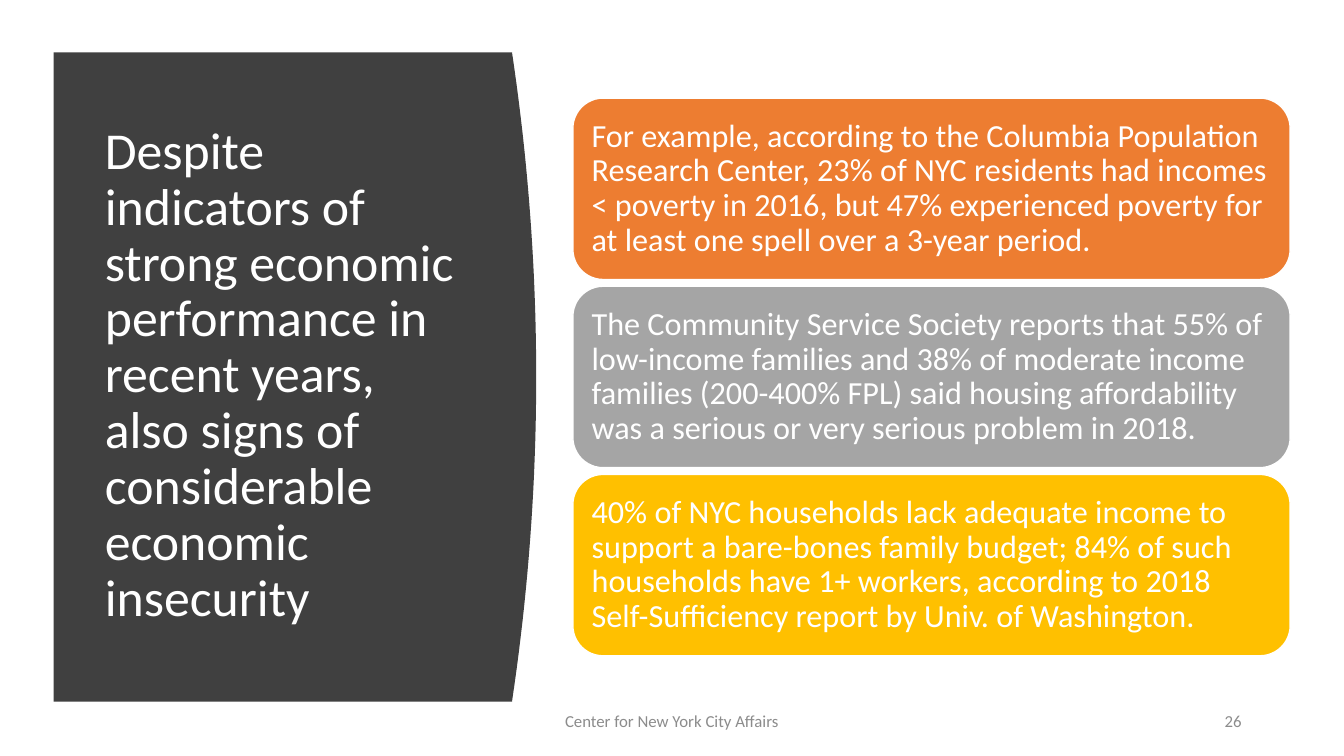
import dataclasses

import pptx
import pptx.dml.color
import pptx.enum.shapes
import pptx.enum.text
import pptx.util

ALIGN = pptx.enum.text.PP_ALIGN
COLUMNS, ROWS = 160, 90
UNIT = pptx.util.Inches(1 / 12)


@dataclasses.dataclass(frozen=True)
class Theme:
    """Colours, font and type sizes of the slide."""
    font: str = "Calibri"
    panel: str = "404040"
    light: str = "FFFFFF"
    muted: str = "8C8C8C"
    cards: tuple = ("ED7D31", "A5A5A5", "FFC000")
    title_size: int = 37
    card_size: int = 23
    footer_size: int = 12


THEME = Theme()

TITLE = ("Despite indicators of strong economic performance in recent years, "
         "also signs of considerable economic insecurity")
FINDINGS = (
    "For example, according to the Columbia Population Research Center, 23% of NYC "
    "residents had incomes < poverty in 2016, but 47% experienced poverty for at least "
    "one spell over a 3-year period.",
    "The Community Service Society reports that 55% of low-income families and 38% of "
    "moderate income families (200-400% FPL) said housing affordability was a serious "
    "or very serious problem in 2018.",
    "40% of NYC households lack adequate income to support a bare-bones family budget; "
    "84% of such households have 1+ workers, according to 2018 Self-Sufficiency report "
    "by Univ. of Washington.",
)


def grid(*cells):
    """Turn grid columns and rows into slide lengths."""
    return [round(cell * UNIT) for cell in cells]


def rgb(colour):
    """Return the colour object for a hex value."""
    return pptx.dml.color.RGBColor.from_string(colour)


def write(shape, text, size, colour, align=ALIGN.LEFT, spacing=1.0):
    """Fill a shape with one vertically centred paragraph."""
    frame = shape.text_frame
    frame.text = text
    frame.word_wrap = True
    frame.auto_size = pptx.enum.text.MSO_AUTO_SIZE.NONE
    frame.vertical_anchor = pptx.enum.text.MSO_ANCHOR.MIDDLE
    paragraph = frame.paragraphs[0]
    paragraph.alignment = align
    paragraph.line_spacing = spacing
    paragraph.font.name = THEME.font
    paragraph.font.size = pptx.util.Pt(size)
    paragraph.font.color.rgb = rgb(colour)


def paint(shape, colour):
    """Give a shape a plain fill without shadow."""
    shape.shadow.inherit = False
    shape.fill.solid()
    shape.fill.fore_color.rgb = rgb(colour)


def add_panel(slide, left, top, right, bottom, bulge, steps=40):
    """Draw the dark panel whose right edge swells outwards."""
    edge = []
    for step in range(steps + 1):
        share = step / steps
        swell = bulge * 4 * share * (1 - share)
        edge.append(grid(right + swell, top + share * (bottom - top)))
    outline = slide.shapes.build_freeform(*grid(left, top))
    outline.add_line_segments([*edge, grid(left, bottom)], close=True)
    panel = outline.convert_to_shape()
    paint(panel, THEME.panel)
    panel.line.fill.background()
    return panel


def set_title(slide, panel):
    """Place the title in front of the panel."""
    title = slide.shapes.title
    title.left, title.top, title.width, title.height = grid(11.28, 13.32, 44.9, 62.9)
    write(title, TITLE, THEME.title_size, THEME.light, spacing=0.9)
    title.element.addprevious(panel.element)


def add_card(slide, row, finding, colour):
    """Add one rounded card with a finding."""
    card = slide.shapes.add_shape(
        pptx.enum.shapes.MSO_SHAPE.ROUNDED_RECTANGLE, *grid(68.2, row, 85.4, 21.6))
    paint(card, colour)
    card.line.color.rgb = rgb(THEME.light)
    card.line.width = pptx.util.Pt(1)
    write(card, finding, THEME.card_size, THEME.light, spacing=0.9)
    frame = card.text_frame
    frame.margin_left = frame.margin_right = pptx.util.Inches(0.1)
    frame.margin_top = frame.margin_bottom = pptx.util.Inches(0.1)


def add_footer(slide, text, column, width, align):
    """Add a small grey text on the footer row."""
    footer = slide.shapes.add_textbox(*grid(column, 83.4, width, 4.8))
    write(footer, text, THEME.footer_size, THEME.muted, align)


def main():
    """Build the slide and save it."""
    deck = pptx.Presentation()
    deck.slide_width, deck.slide_height = grid(COLUMNS, ROWS)
    slide = deck.slides.add_slide(deck.slide_layouts.get_by_name("Title Only"))
    panel = add_panel(slide, 6.4, 6.24, 60.96, 83.52, bulge=2.88)
    set_title(slide, panel)
    for index, (finding, colour) in enumerate(zip(FINDINGS, THEME.cards)):
        add_card(slide, 11.68 + 22.4 * index, finding, colour)
    add_footer(slide, "Center for New York City Affairs", 53, 54, ALIGN.CENTER)
    add_footer(slide, "26", 113, 36, ALIGN.RIGHT)
    deck.save("out.pptx")


if __name__ == "__main__":
    main()
